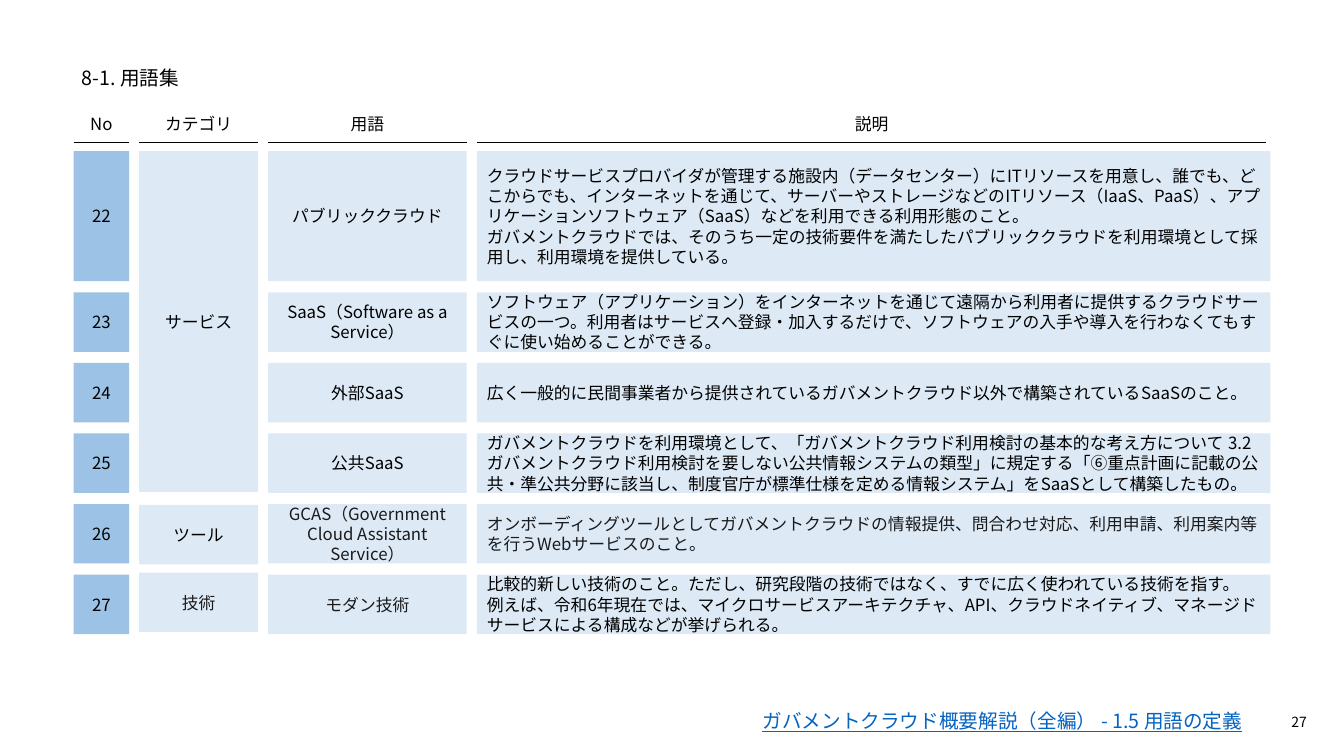
from dataclasses import dataclass

from lxml import etree
from pptx import Presentation
from pptx.dml.color import RGBColor
from pptx.enum.lang import MSO_LANGUAGE_ID as Language
from pptx.enum.shapes import MSO_CONNECTOR as Connector, MSO_SHAPE as Shape
from pptx.enum.text import MSO_ANCHOR as Anchor, PP_ALIGN as Align
from pptx.oxml.ns import qn
from pptx.util import Inches, Pt


@dataclass(frozen=True)
class Theme:
    font: str = "Noto Sans CJK JP"
    ink: str = "000000"
    soft_ink: str = "1A1A1C"
    link: str = "0563C1"
    number_fill: str = "9CC2E5"
    cell_fill: str = "DDEAF6"
    heading_size: int = 14
    body_size: int = 12
    page_size: int = 10
    rule_width: float = 0.75


@dataclass(frozen=True)
class Term:
    name: str
    description: str
    name_ink: str = Theme.ink
    description_ink: str = Theme.ink


@dataclass(frozen=True)
class Category:
    name: str
    top: float
    height: float
    ink: str = Theme.ink


FIRST_NUMBER = 22
FIRST_TOP, FIRST_HEIGHT = 1.5, 1.29
SECOND_TOP, ROW_PITCH, ROW_HEIGHT = 2.9, 0.7, 0.59
COLUMN_LEFT, COLUMN_GAP = 0.73, 0.1
COLUMN_WIDTHS = (0.55, 1.18, 1.97, 7.87)
HEADERS = ("No", "カテゴリ", "用語", "説明")
HEADER_WIDTHS = COLUMN_WIDTHS[:3] + (7.83,)
HEADER_TOP, HEADER_HEIGHT, RULE_TOP = 1.08, 0.3, 1.41
CELL_INSETS = (0.1, 0.05, 0.1, 0.05)

CATEGORIES = (
    Category("サービス", 1.5, 3.38),
    Category("ツール", 5.01, ROW_HEIGHT),
    Category("技術", 5.68, ROW_HEIGHT, Theme.soft_ink),
)

TERMS = (
    Term(
        "パブリッククラウド",
        "クラウドサービスプロバイダが管理する施設内（データセンター）にITリソースを用意し、誰でも、"
        "どこからでも、インターネットを通じて、サーバーやストレージなどのITリソース（IaaS、PaaS）、"
        "アプリケーションソフトウェア（SaaS）などを利用できる利用形態のこと。\n"
        "ガバメントクラウドでは、そのうち一定の技術要件を満たしたパブリッククラウドを利用環境として"
        "採用し、利用環境を提供している。",
    ),
    Term(
        "SaaS（Software as a Service）",
        "ソフトウェア（アプリケーション）をインターネットを通じて遠隔から利用者に提供するクラウド"
        "サービスの一つ。利用者はサービスへ登録・加入するだけで、ソフトウェアの入手や導入を行わなくても"
        "すぐに使い始めることができる。",
    ),
    Term(
        "外部SaaS",
        "広く一般的に民間事業者から提供されているガバメントクラウド以外で構築されているSaaSのこと。",
    ),
    Term(
        "公共SaaS",
        "ガバメントクラウドを利用環境として、「ガバメントクラウド利用検討の基本的な考え方について "
        "3.2ガバメントクラウド利用検討を要しない公共情報システムの類型」に規定する「⑥重点計画に記載の"
        "公共・準公共分野に該当し、制度官庁が標準仕様を定める情報システム」をSaaSとして構築したもの。",
    ),
    Term(
        "GCAS（Government Cloud Assistant Service）",
        "オンボーディングツールとしてガバメントクラウドの情報提供、問合わせ対応、利用申請、利用案内等"
        "を行うWebサービスのこと。",
        Theme.soft_ink,
        Theme.soft_ink,
    ),
    Term(
        "モダン技術",
        "比較的新しい技術のこと。ただし、研究段階の技術ではなく、すでに広く使われている技術を指す。\n"
        "例えば、令和6年現在では、マイクロサービスアーキテクチャ、API、クラウドネイティブ、"
        "マネージドサービスによる構成などが挙げられる。",
        Theme.soft_ink,
    ),
)


class SlideBuilder:
    """Draw styled elements on one slide."""

    def __init__(self, slide, theme):
        self.slide = slide
        self.theme = theme

    def set_text(self, shape, text, size, ink, align, anchor, insets):
        text_frame = shape.text_frame
        text_frame.word_wrap = True
        text_frame.vertical_anchor = anchor
        (text_frame.margin_left, text_frame.margin_top,
         text_frame.margin_right, text_frame.margin_bottom) = map(Inches, insets)
        text_frame.text = text
        for paragraph in text_frame.paragraphs:
            paragraph.alignment = align
            for run in paragraph.runs:
                font = run.font
                font.name = self.theme.font
                font.size = Pt(size)
                font.color.rgb = RGBColor.from_string(ink)
                font.language_id = Language.JAPANESE
                properties = run._r.get_or_add_rPr()
                etree.SubElement(properties, qn("a:ea"), typeface=self.theme.font)

    def text(self, box, text, size, ink=Theme.ink, align=Align.LEFT,
             anchor=Anchor.MIDDLE, insets=CELL_INSETS):
        shape = self.slide.shapes.add_textbox(*map(Inches, box))
        self.set_text(shape, text, size, ink, align, anchor, insets)
        return shape

    def cell(self, box, text, fill, ink=Theme.ink, align=Align.CENTER):
        shape = self.slide.shapes.add_shape(Shape.RECTANGLE, *map(Inches, box))
        shape.shadow.inherit = False
        shape.fill.solid()
        shape.fill.fore_color.rgb = RGBColor.from_string(fill)
        shape.line.fill.background()
        self.set_text(shape, text, self.theme.body_size, ink, align, Anchor.MIDDLE, CELL_INSETS)

    def rule(self, left, top, width):
        connector = self.slide.shapes.add_connector(
            Connector.STRAIGHT, *map(Inches, (left, top, left + width, top)))
        connector.line.color.rgb = RGBColor.from_string(self.theme.ink)
        connector.line.width = Pt(self.theme.rule_width)
        etree.SubElement(connector._element.spPr, qn("a:effectLst"))

    def header(self, left, width, text):
        self.text((left, HEADER_TOP, width, HEADER_HEIGHT), text,
                  self.theme.body_size, align=Align.CENTER, anchor=Anchor.TOP)
        self.rule(left, RULE_TOP, width)

    def source_link(self, box, text):
        shape = self.text(box, text, self.theme.heading_size, self.theme.link,
                          Align.RIGHT, insets=(0, 0.05, 0.1, 0.05))
        paragraph = shape.text_frame.paragraphs[0]
        paragraph.line_spacing = 0.9
        paragraph.space_before = Pt(10)
        paragraph.runs[0].font.underline = True


def main():
    presentation = Presentation()
    presentation.slide_width = Inches(13.33)
    presentation.slide_height = Inches(7.5)
    slide = presentation.slides.add_slide(presentation.slide_layouts[6])
    theme = Theme()
    builder = SlideBuilder(slide, theme)

    builder.text((12.47, 6.96, 0.49, 0.4), "27", theme.page_size,
                 align=Align.RIGHT, insets=(0.1, 0.05, 0, 0.05))
    builder.source_link((0.81, 6.96, 11.61, 0.4),
                        "ガバメントクラウド概要解説（全編） - 1.5 用語の定義")
    builder.text((0.81, 0.6, 11.72, 0.34), "8-1. 用語集", theme.heading_size,
                 insets=(0, 0, 0, 0))

    lefts = [COLUMN_LEFT + sum(COLUMN_WIDTHS[:index]) + index * COLUMN_GAP
             for index in range(len(COLUMN_WIDTHS))]
    for left, width, header in zip(lefts, HEADER_WIDTHS, HEADERS):
        builder.header(left, width, header)

    number_column, category_column, name_column, description_column = zip(lefts, COLUMN_WIDTHS)
    for category in CATEGORIES:
        left, width = category_column
        builder.cell((left, category.top, width, category.height),
                     category.name, theme.cell_fill, category.ink)

    for index, term in enumerate(TERMS):
        top = SECOND_TOP + (index - 1) * ROW_PITCH if index else FIRST_TOP
        height = ROW_HEIGHT if index else FIRST_HEIGHT
        for (left, width), text, fill, ink, align in (
            (number_column, str(FIRST_NUMBER + index), theme.number_fill, theme.ink, Align.CENTER),
            (name_column, term.name, theme.cell_fill, term.name_ink, Align.CENTER),
            (description_column, term.description, theme.cell_fill,
             term.description_ink, Align.LEFT),
        ):
            builder.cell((left, top, width, height), text, fill, ink, align)

    presentation.save("out.pptx")


if __name__ == "__main__":
    main()
